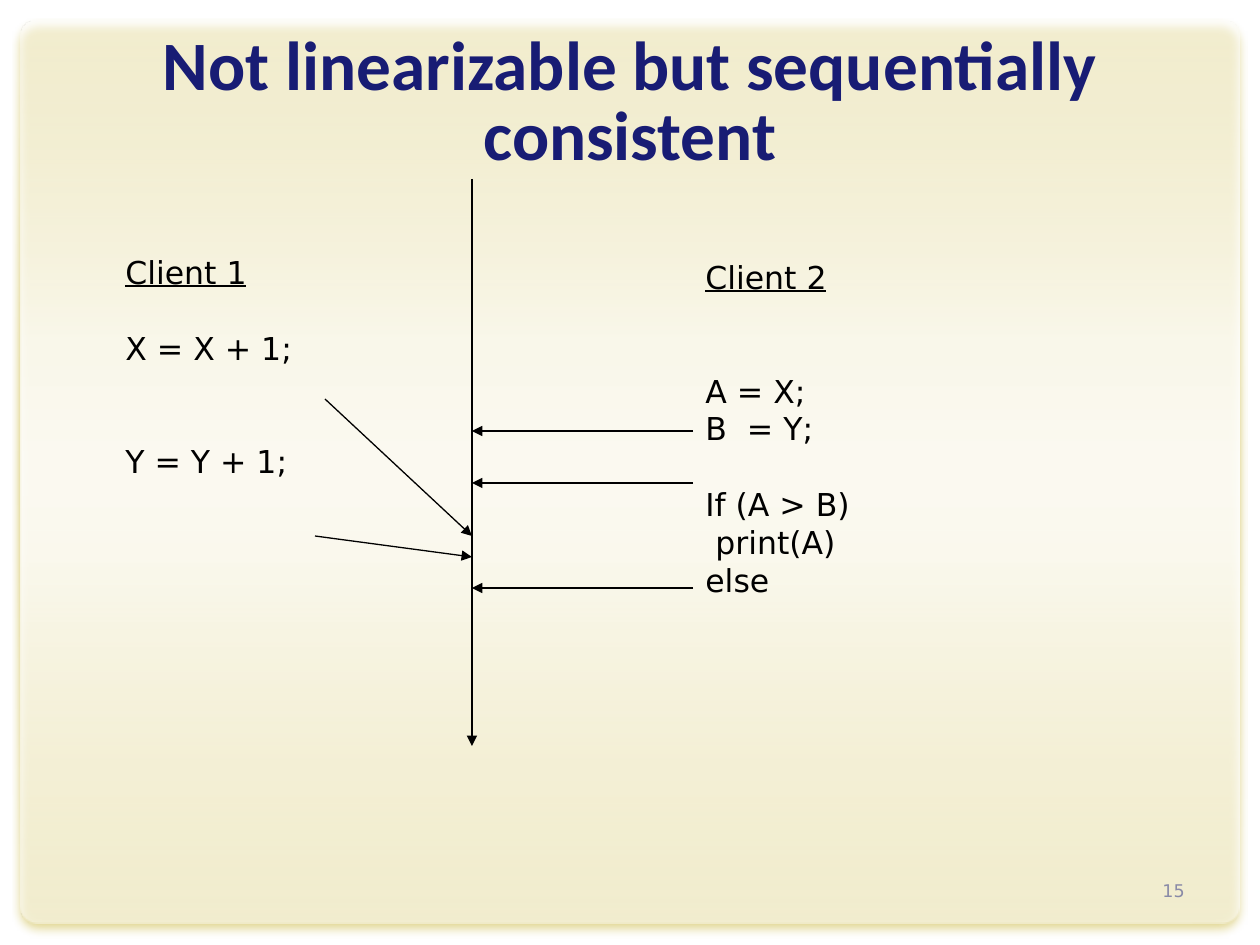
from dataclasses import dataclass

from lxml import etree
from pptx import Presentation
from pptx import util as u
from pptx.dml.color import RGBColor
from pptx.enum import shapes, text
from pptx.oxml import parse_xml
from pptx.oxml.ns import nsdecls, qn


@dataclass(frozen=True)
class Theme:
    """Colours, fonts and type sizes of the slide."""
    ink: str = "000000"
    title: str = "181C74"
    number: str = "898AA7"
    panel: str = "FFFFFF"
    glow: str = "C5AF25"
    title_font: str = "Calibri"
    body_font: str = "DejaVu Sans"
    title_size: float = 39.6
    title_leading: float = 40
    body_size: float = 18
    body_leading: float = 21.6
    number_size: float = 10
    line_width: float = 0.75


THEME = Theme()
PX_PER_INCH = 126
PANEL_STOPS = [(0, 50), (35, 87), (50, 92), (60, 89), (100, 55)]
TIMELINE_X = 472
CLIENT_2_X = 693
CLIENT_1 = [("Client 1", 0), ("X = X + 1;", 1), ("Y = Y + 1;", 2)]
CLIENT_2 = [("Client 2", 0), ("A = X;", 2), ("B  = Y;", 0),
            ("If (A > B)", 1), (" print(A)", 0), ("else", 0)]
READS = [431, 483, 588]
WRITES = [((325, 399), 536), ((315, 536), 557)]


def px(length):
    """Turn pixels into EMU."""
    return u.Emu(round(length * u.Inches(1) / PX_PER_INCH))


def add_panel(slide, box):
    """Add the rounded translucent panel with its soft glow."""
    shape = slide.shapes.add_shape(
        shapes.MSO_SHAPE.ROUNDED_RECTANGLE, *map(px, box))
    shape.adjustments[0] = 0.02
    shape.line.fill.background()
    stops = "".join(
        f'<a:gs pos="{position * 1000}"><a:srgbClr val="{THEME.panel}">'
        f'<a:alpha val="{alpha * 1000}"/></a:srgbClr></a:gs>'
        for position, alpha in PANEL_STOPS)
    gradient = parse_xml(
        f'<a:gradFill {nsdecls("a")} rotWithShape="1"><a:gsLst>{stops}</a:gsLst>'
        '<a:lin ang="5400000" scaled="0"/></a:gradFill>')
    effects = parse_xml(
        f'<a:effectLst {nsdecls("a")}><a:outerShdw blurRad="{u.Pt(5)}" '
        f'dist="{u.Pt(3.6)}" dir="5400000" rotWithShape="0">'
        f'<a:srgbClr val="{THEME.glow}"><a:alpha val="90000"/></a:srgbClr>'
        '</a:outerShdw></a:effectLst>')
    properties = shape.element.spPr
    properties.find(qn("a:prstGeom")).addnext(gradient)
    properties.append(effects)


def add_frame(slide, box, anchor):
    """Add a wrapping text box and return its text frame."""
    frame = slide.shapes.add_textbox(*map(px, box)).text_frame
    frame.word_wrap = True
    frame.vertical_anchor = anchor
    return frame


def add_run(paragraph, words, font, size, colour, bold=False, underline=False):
    """Add one styled run to a paragraph."""
    run = paragraph.add_run()
    run.text = words
    run.font.name = font
    run.font.size = u.Pt(size)
    run.font.color.rgb = RGBColor.from_string(colour)
    run.font.bold = bold
    run.font.underline = underline


def add_title(slide, box, words):
    """Add the centred bold title."""
    paragraph = add_frame(slide, box, text.MSO_ANCHOR.MIDDLE).paragraphs[0]
    paragraph.alignment = text.PP_ALIGN.CENTER
    paragraph.line_spacing = u.Pt(THEME.title_leading)
    add_run(paragraph, words, THEME.title_font, THEME.title_size,
            THEME.title, bold=True)


def add_number(slide, box, words):
    """Add the slide number at the lower right."""
    paragraph = add_frame(slide, box, text.MSO_ANCHOR.BOTTOM).paragraphs[0]
    paragraph.alignment = text.PP_ALIGN.RIGHT
    add_run(paragraph, words, THEME.body_font, THEME.number_size, THEME.number)


def add_program(slide, box, lines):
    """Add an underlined client name and its statements, each after a gap in lines."""
    frame = add_frame(slide, box, text.MSO_ANCHOR.TOP)
    for index, (words, gap) in enumerate(lines):
        paragraph = frame.add_paragraph() if index else frame.paragraphs[0]
        paragraph.line_spacing = u.Pt(THEME.body_leading)
        paragraph.space_before = u.Pt(gap * THEME.body_leading)
        add_run(paragraph, words, THEME.body_font, THEME.body_size,
                THEME.ink, underline=index == 0)


def add_arrow(slide, start, end):
    """Add a thin line with a triangle at its end."""
    connector = slide.shapes.add_connector(
        shapes.MSO_CONNECTOR.STRAIGHT, *map(px, (*start, *end)))
    connector.line.color.rgb = RGBColor.from_string(THEME.ink)
    connector.line.width = u.Pt(THEME.line_width)
    etree.SubElement(connector.line._get_or_add_ln(), qn("a:tailEnd"),
                     type="triangle")
    etree.SubElement(connector.element.spPr, qn("a:effectLst"))


def main():
    """Build and save the slide."""
    presentation = Presentation()
    presentation.slide_width = px(1260)
    presentation.slide_height = px(945)
    slide = presentation.slides.add_slide(presentation.slide_layouts[6])

    add_panel(slide, (21, 21, 1218, 903))
    add_number(slide, (903, 857, 294, 50), "15")
    add_title(slide, (42, 31, 1176, 147),
              "Not linearizable but sequentially consistent")
    add_program(slide, (113, 247, 208, 365), CLIENT_1)
    add_program(slide, (693, 252, 205, 515), CLIENT_2)

    add_arrow(slide, (TIMELINE_X, 179), (TIMELINE_X, 746))
    for y in READS:
        add_arrow(slide, (CLIENT_2_X, y), (TIMELINE_X, y))
    for start, y in WRITES:
        add_arrow(slide, start, (TIMELINE_X, y))
    presentation.save("out.pptx")


if __name__ == "__main__":
    main()
